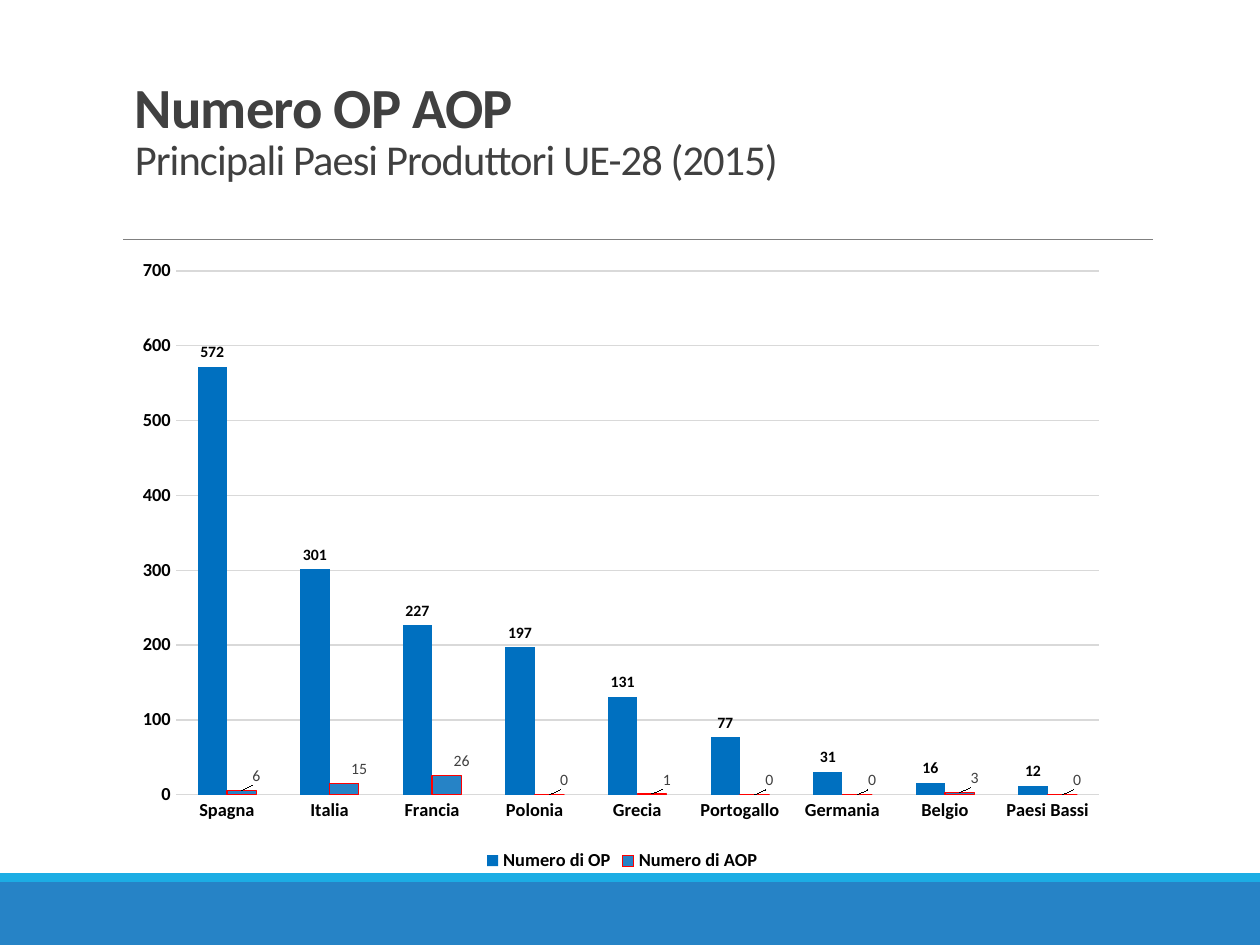
from lxml.etree import SubElement
from pptx import Presentation
from pptx.chart.data import CategoryChartData
from pptx.dml.color import RGBColor
from pptx.enum.chart import (XL_CHART_TYPE, XL_LABEL_POSITION,
                             XL_LEGEND_POSITION, XL_TICK_MARK)
from pptx.enum.shapes import MSO_CONNECTOR, MSO_SHAPE
from pptx.enum.text import MSO_ANCHOR, MSO_AUTO_SIZE, PP_ALIGN
from pptx.oxml import parse_xml
from pptx.oxml.ns import nsdecls, qn
from pptx.util import Inches, Pt

COLORS = {"band": "2683C6", "stripe": "1CADE4", "rule": "808080",
          "text": "404040", "black": "000000", "grid": "D9D9D9",
          "op": "0070C0", "edge": "FF0000"}
LANDS = ["Spagna", "Italia", "Francia", "Polonia", "Grecia",
         "Portogallo", "Germania", "Belgio", "Paesi Bassi"]
OP = [572, 301, 227, 197, 131, 77, 31, 16, 12]
AOP = [6, 15, 26, 0, 1, 0, 0, 3, 0]


def tone(name):
    return RGBColor.from_string(COLORS[name])


def place(parent, mode=None, **spots):
    """Fill a chart layout element with a manual position."""
    manual = SubElement(parent, qn("c:manualLayout"))
    if mode:
        SubElement(manual, qn("c:layoutTarget"), val=mode)
        for key in ("xMode", "yMode"):
            SubElement(manual, qn("c:" + key), val="edge")
    for key, val in spots.items():
        SubElement(manual, qn("c:" + key), val=str(val))


class Deck:
    face = "Calibri"

    def __init__(self):
        self.prs = Presentation()
        self.prs.slide_width = Inches(10)
        self.prs.slide_height = Inches(7.5)
        self.slide = self.prs.slides.add_slide(self.prs.slide_layouts[5])

    def style(self, font, size, color="black", bold=False):
        font.name = self.face
        font.size = Pt(size)
        font.bold = bold
        font.color.rgb = tone(color)

    def band(self, top, height, color):
        box = self.slide.shapes.add_shape(
            MSO_SHAPE.RECTANGLE, 0, Inches(top), Inches(10), Inches(height))
        box.shadow.inherit = False
        box.fill.solid()
        box.fill.fore_color.rgb = tone(color)
        box.line.fill.background()

    def rule(self, left, right, top):
        line = self.slide.shapes.add_connector(
            MSO_CONNECTOR.STRAIGHT, Inches(left), Inches(top),
            Inches(right), Inches(top))
        line.line.color.rgb = tone("rule")
        line.line.width = Pt(0.5)
        line._element.spPr.append(parse_xml(f"<a:effectLst {nsdecls('a')}/>"))

    def title(self, head, sub):
        box = self.slide.shapes.title
        box.left, box.top = Inches(0.97), Inches(0.75)
        box.width, box.height = Inches(8.84), Inches(0.76)
        frame = box.text_frame
        frame.text = f"{head}\v{sub}"
        frame.word_wrap = True
        frame.auto_size = MSO_AUTO_SIZE.NONE
        frame.vertical_anchor = MSO_ANCHOR.BOTTOM
        para = frame.paragraphs[0]
        para.alignment = PP_ALIGN.LEFT
        para.line_spacing = 0.85
        for run, size, bold in zip(para.runs, (32.4, 24.3), (True, False)):
            self.style(run.font, size, "text", bold)
            run._r.get_or_add_rPr().set("spc", "-50")

    def chart(self):
        data = CategoryChartData()
        data.categories = LANDS
        data.add_series("Numero di OP", OP)
        data.add_series("Numero di AOP", AOP)
        chart = self.slide.shapes.add_chart(
            XL_CHART_TYPE.COLUMN_CLUSTERED, Inches(1), Inches(1.95),
            Inches(7.88), Inches(5.01), data).chart
        self.style(chart.font, 10)
        chart.has_title = False
        chart.has_legend = True
        chart.legend.position = XL_LEGEND_POSITION.BOTTOM
        chart.legend.include_in_layout = False
        self.style(chart.legend.font, 10.5, bold=True)
        self.axes(chart)
        plot = chart.plots[0]
        plot.gap_width = 150
        plot.overlap = 0
        plot.vary_by_categories = False
        first, second = plot.series
        self.series(first, "op", "black", True)
        self.series(second, "band", "text", False)
        second.format.line.color.rgb = tone("edge")
        second.format.line.width = Pt(0.75)
        self.shift(second)
        area = chart._chartSpace.chart.plotArea
        layout = area.find(qn("c:layout"))
        if layout is None:
            layout = parse_xml(f"<c:layout {nsdecls('c')}/>")
            area.insert(0, layout)
        place(layout, "inner", x=0.05, y=0.04, w=0.93, h=0.83)

    def axes(self, chart):
        for axis in (chart.category_axis, chart.value_axis):
            axis.major_tick_mark = axis.minor_tick_mark = XL_TICK_MARK.NONE
            axis.format.line.fill.background()
            self.style(axis.tick_labels.font, 10.5, bold=True)
        axis = chart.value_axis
        axis.minimum_scale, axis.maximum_scale = 0, 700
        axis.major_unit = 100
        axis.has_major_gridlines = True
        grid = axis.major_gridlines.format.line
        grid.color.rgb = tone("grid")
        grid.width = Pt(0.75)

    def series(self, series, fill, color, bold):
        series.invert_if_negative = False
        series.format.fill.solid()
        series.format.fill.fore_color.rgb = tone(fill)
        labels = series.data_labels
        labels.show_value = True
        labels.position = XL_LABEL_POSITION.OUTSIDE_END
        self.style(labels.font, 9, color, bold)

    def shift(self, series):
        """Move each label a little to the right of its bar."""
        for num in range(len(LANDS)):
            label = series.points[num].data_label
            self.style(label.font, 9, "text")
            label.position = XL_LABEL_POSITION.OUTSIDE_END
        for mark in series._element.iter(qn("c:dLbl")):
            layout = parse_xml(f"<c:layout {nsdecls('c')}/>")
            place(layout, x=0.015, y=0)
            mark.insert(1, layout)


def main():
    deck = Deck()
    deck.band(7, 0.5, "band")
    deck.band(6.93, 0.07, "stripe")
    deck.rule(0.98, 9.15, 1.9)
    deck.title("Numero OP AOP", "Principali Paesi Produttori UE-28 (2015)")
    deck.chart()
    deck.prs.save("out.pptx")


if __name__ == "__main__":
    main()
